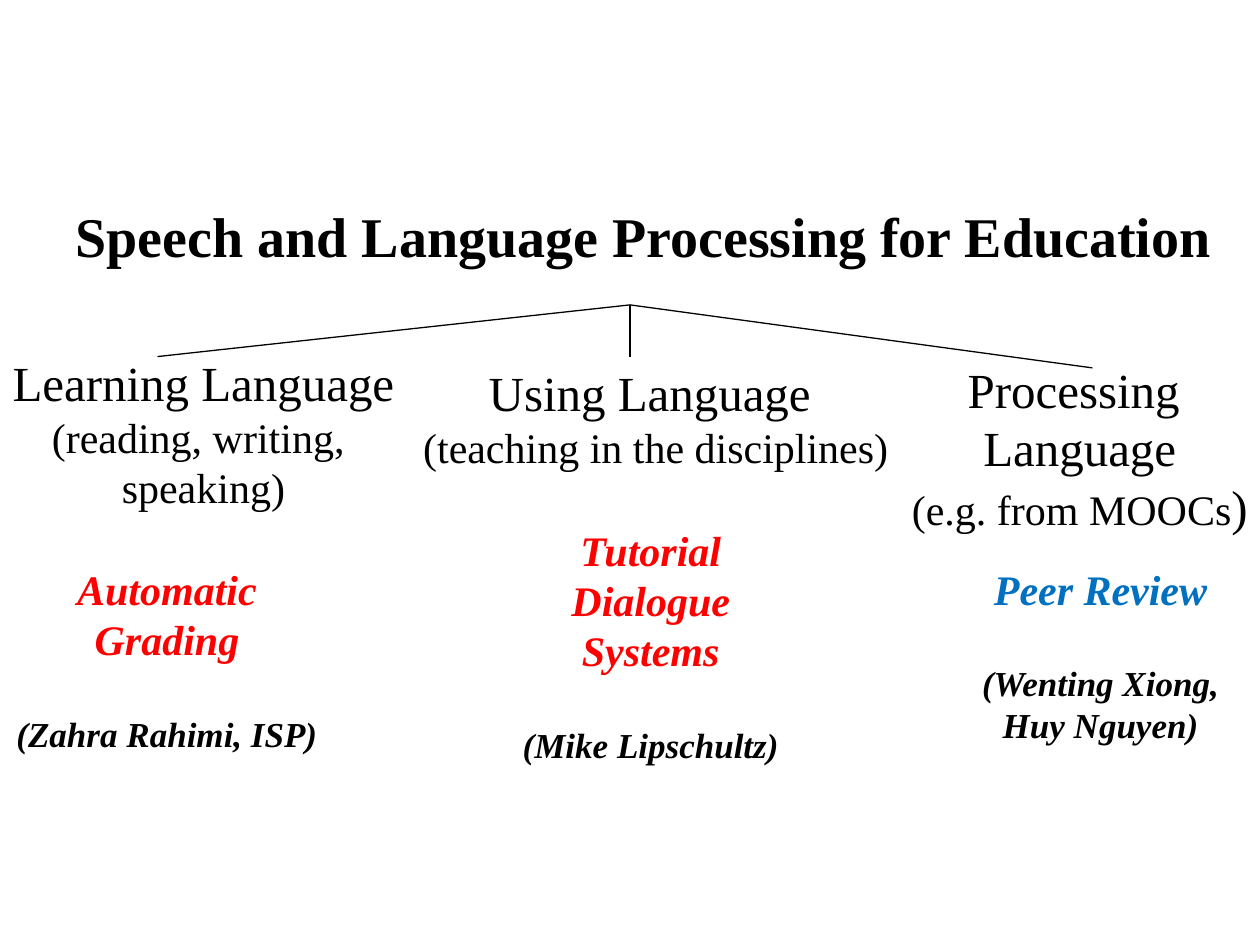
from pptx import Presentation
from pptx.dml.color import RGBColor
from pptx.enum.shapes import MSO_CONNECTOR
from pptx.enum.text import MSO_ANCHOR, MSO_AUTO_SIZE, PP_ALIGN
from pptx.oxml.ns import qn
from pptx.util import Inches, Pt
from lxml import etree

STRAIGHT = MSO_CONNECTOR.STRAIGHT
TOP = MSO_ANCHOR.TOP
FIT_SHAPE = MSO_AUTO_SIZE.SHAPE_TO_FIT_TEXT
LEFT, CENTER = PP_ALIGN.LEFT, PP_ALIGN.CENTER

FONT = "Times New Roman"
BLACK, RED, BLUE = "000000", "FF0000", "0070C0"
TOPIC_SIZE, DETAIL_SIZE, PEOPLE_SIZE = 28, 24, 20
PEOPLE_GAP = 27.6


def color(value):
    """Turn a hex string into a colour."""
    return RGBColor.from_string(value)


class SlideBuilder:
    """Hold the style and the current slide."""

    def __init__(self, deck):
        """Add a title-only slide to the deck."""
        self.page = deck.slides.add_slide(deck.slide_layouts[5])

    def place(self, box, area, wrap):
        """Position a text shape and set up its frame."""
        box.left, box.top, box.width, box.height = map(Inches, area)
        frame = box.text_frame
        frame.word_wrap = wrap
        frame.auto_size = FIT_SHAPE
        frame.vertical_anchor = TOP
        return frame

    def style(self, para, size, fill=BLACK, bold=False, italic=False, align=CENTER):
        """Set the font and alignment of a paragraph."""
        para.alignment = align
        font = para.font
        font.name, font.size = FONT, Pt(size)
        font.bold, font.italic = bold, italic
        font.color.rgb = color(fill)

    def title(self, text, area):
        """Fill the title placeholder."""
        frame = self.place(self.page.shapes.title, area, False)
        frame.text = text
        self.style(frame.paragraphs[0], 32, bold=True, align=LEFT)

    def text_box(self, area, wrap, lines):
        """Add a box and return its paragraphs, one for each line."""
        box = self.page.shapes.add_textbox(*map(Inches, area))
        frame = self.place(box, area, wrap)
        frame.text = "\n".join(lines)
        return frame.paragraphs

    def topic(self, area, heading, details):
        """Add a topic heading with smaller detail lines."""
        paras = self.text_box(area, False, heading + details)
        for index, para in enumerate(paras):
            self.style(para, TOPIC_SIZE if index < len(heading) else DETAIL_SIZE)
        return paras

    def project(self, area, wrap, name, people, fill):
        """Add a project name with its people below."""
        *names, team = self.text_box(area, wrap, name + [people])
        for para in names:
            self.style(para, DETAIL_SIZE, fill, True, True)
        self.style(team, PEOPLE_SIZE, BLACK, True, True)
        team.space_before = Pt(PEOPLE_GAP)

    def branch(self, start, end):
        """Draw a thin line between two points."""
        line = self.page.shapes.add_connector(STRAIGHT, *map(Inches, start + end))
        line.line.color.rgb = color(BLACK)
        line.line.width = Pt(0.75)
        etree.SubElement(line._element.spPr, qn("a:effectLst"))


def main():
    """Build the slide and save it."""
    deck = Presentation()
    deck.slide_width, deck.slide_height = Inches(10), Inches(7.5)
    slide = SlideBuilder(deck)
    slide.title("Speech and Language Processing for Education", (0.5, 1.55, 9.3, 0.64))

    slide.topic((0, 2.75, 3.23, 1.77), ["Learning Language"],
                ["(reading, writing, ", "speaking)"])
    slide.topic((3.24, 2.83, 3.93, 0.98), ["Using Language "],
                ["(teaching in the disciplines)"])
    processing = slide.topic((7.12, 2.8, 2.9, 1.51), ["Processing ", "Language"],
                             ["(e.g. from MOOCs"])
    bracket = processing[-1].add_run()
    bracket.text = ")"
    bracket.font.size = Pt(TOPIC_SIZE)

    slide.project((3.85, 4.11, 2.63, 2.05), True, ["Tutorial Dialogue", "Systems"],
                  "(Mike Lipschultz)", RED)
    slide.project((0.02, 4.42, 2.61, 1.65), False, ["Automatic", "Grading"],
                  "(Zahra Rahimi, ISP)", RED)
    slide.project((7.61, 4.42, 2.25, 1.58), True, ["Peer Review"],
                  "(Wenting Xiong, Huy Nguyen)", BLUE)

    for end in ((1.25, 2.83), (5, 2.83), (8.67, 2.92)):
        slide.branch((5, 2.42), end)
    deck.save("out.pptx")


if __name__ == "__main__":
    main()
